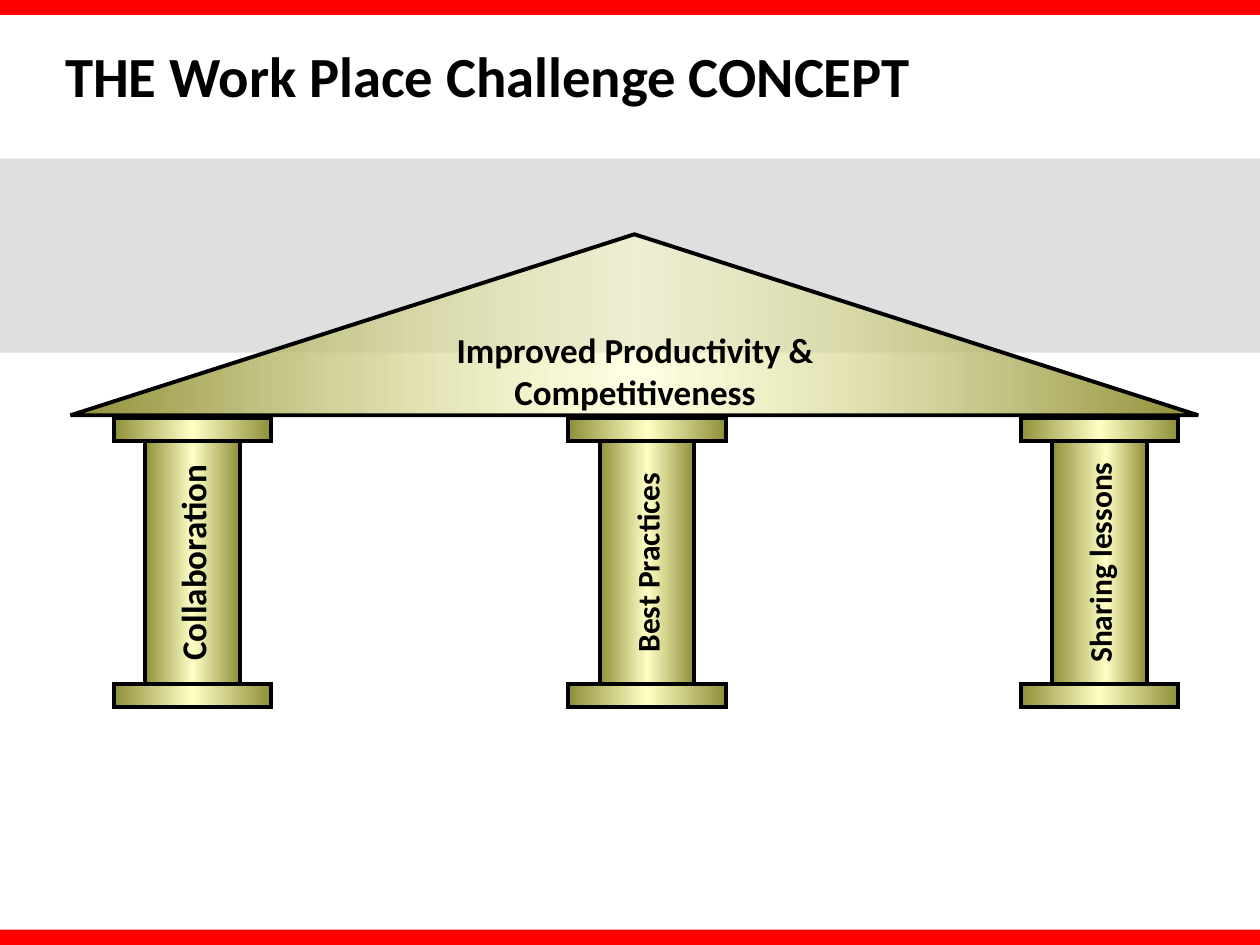
from lxml.etree import SubElement as Sub
from pptx import Presentation as Deck
from pptx.dml.color import RGBColor as Rgb
from pptx.enum.shapes import MSO_SHAPE as Kind
from pptx.enum.text import MSO_ANCHOR as Anchor, PP_ALIGN as Align
from pptx.oxml.ns import qn
from pptx.util import Pt

HUES = {"red": "FF0000", "gray": "999999", "dark": "8F8F39",
        "pale": "FFFFC5", "ink": "000000"}


class Page:
    face = "Calibri"
    edge = 2.25

    def __init__(self, deck):
        self.slide = deck.slides.add_slide(deck.slide_layouts[6])

    def shape(self, kind, box):
        item = self.slide.shapes.add_shape(kind, *map(Pt, box))
        item.shadow.inherit = False
        return item

    def fade(self, color, alpha):
        Sub(color, qn("a:alpha"), val=str(alpha * 1000))

    def band(self, box, hue, alpha=100):
        item = self.shape(Kind.RECTANGLE, box)
        item.fill.solid()
        item.fill.fore_color.rgb = Rgb.from_string(HUES[hue])
        item.line.fill.background()
        if alpha < 100:
            self.fade(item._element.spPr.find(".//" + qn("a:srgbClr")), alpha)

    def stone(self, box, kind=Kind.RECTANGLE, mid=50, alpha=100):
        item = self.shape(kind, box)
        item.fill.gradient()
        item.fill.gradient_angle = 0
        stops = item._element.spPr.find(".//" + qn("a:gsLst"))
        for stop in list(stops):
            stops.remove(stop)
        for pos, hue in ((0, "dark"), (mid, "pale"), (100, "dark")):
            stop = Sub(stops, qn("a:gs"), pos=str(pos * 1000))
            color = Sub(stop, qn("a:srgbClr"), val=HUES[hue])
            if hue == "pale" and alpha < 100:
                self.fade(color, alpha)
        item.line.color.rgb = Rgb.from_string(HUES["ink"])
        item.line.width = Pt(self.edge)
        Sub(item.line._get_or_add_ln(), qn("a:miter"), lim="800000")

    def text(self, words, box, size, turn=0, align=Align.CENTER, **form):
        item = self.slide.shapes.add_textbox(*map(Pt, box))
        item.rotation = turn
        frame = item.text_frame
        look = {"word_wrap": True, "vertical_anchor": Anchor.MIDDLE,
                "margin_left": 0, "margin_right": 0,
                "margin_top": 0, "margin_bottom": 0}
        for name, value in (look | form).items():
            setattr(frame, name, value)
        line = frame.paragraphs[0]
        line.alignment = align
        run = line.add_run()
        run.text = words
        for name, value in {"name": self.face, "size": Pt(size), "bold": True}.items():
            setattr(run.font, name, value)
        run.font.color.rgb = Rgb.from_string(HUES["ink"])

    def pillar(self, words, mid, size, glow=50):
        top, tall, slab = 252, 139, 13
        self.stone((mid - 27, top, 54, tall), mid=glow)
        high = size * 1.16
        self.text(words, (mid - tall / 2, top + tall / 2 - high / 2, tall, high),
                  size, turn=270)
        for y in (top + tall, top - slab):
            self.stone((mid - 45, y, 90, slab))


def main():
    deck = Deck()
    deck.slide_width, deck.slide_height = Pt(720), Pt(540)
    page = Page(deck)
    page.band((0, 90.7, 720, 110.9), "gray", 31)
    page.band((-2, 0, 722, 8.6), "red")
    page.band((0, 531.2, 720, 10), "red")
    page.text("THE Work Place Challenge CONCEPT", (30.2, 18, 648, 90), 32.4,
              align=Align.LEFT, vertical_anchor=Anchor.TOP,
              margin_left=Pt(7.2), margin_right=Pt(7.2), margin_top=Pt(5.5))
    page.pillar("Best Practices", 369.7, 18)
    page.pillar("Collaboration", 110, 20)
    page.stone((40.3, 133.9, 644.4, 103.4), Kind.ISOSCELES_TRIANGLE, alpha=47)
    page.text("Improved Productivity & Competitiveness",
              (201.6, 187.5, 322.6, 48.2), 20)
    page.pillar("Sharing lessons", 628.2, 18, 57)
    deck.save("out.pptx")


if __name__ == "__main__":
    main()
